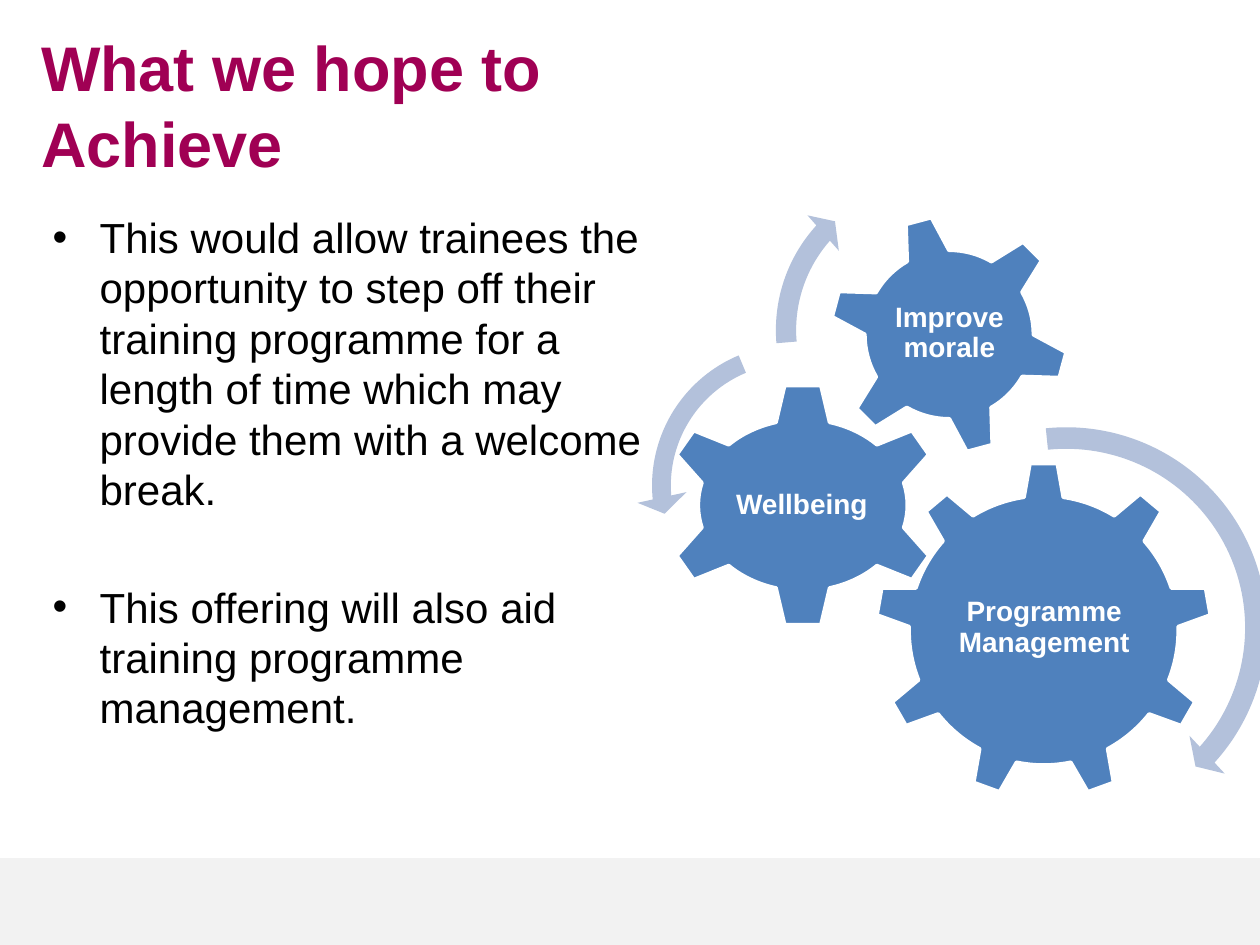
from pptx import Presentation
from pptx.dml.color import RGBColor
from pptx.enum.shapes import MSO_SHAPE
from pptx.enum.text import MSO_ANCHOR, PP_ALIGN
from pptx.oxml.ns import qn
from pptx.util import Cm, Pt
from lxml.etree import SubElement

COLORS = {
    "title": "A00054",
    "body": "000000",
    "gear": "4F81BD",
    "arrow": "B3C1DB",
    "footer": "F2F2F2",
    "white": "FFFFFF",
}
FONT = "Arial"

BENEFITS = [
    "This would allow trainees the opportunity to step off their training "
    "programme for a length of time which may provide them with a welcome break.",
    "This offering will also aid training programme management.",
]

# Label, shape, gear box, rotation, label box (cm)
GEARS = [
    ("Programme Management", MSO_SHAPE.GEAR_9,
     (17.65, 9.32, 6.78, 6.78), 0, (19.02, 10.92, 4.06, 3.48)),
    ("Wellbeing", MSO_SHAPE.GEAR_6,
     (13.34, 7.72, 5.69, 4.93), 0, (14.68, 8.97, 2.97, 2.44)),
    ("Improve morale", MSO_SHAPE.GEAR_6,
     (16.71, 4.32, 4.85, 4.85), 345, (17.78, 5.36, 2.72, 2.72)),
]

# Shape, left, top, side (cm), adjustments
ARROWS = [
    (MSO_SHAPE.CIRCULAR_ARROW, 17.15, 8.31, 8.69,
     (0.05, 2.99, 25.22, 158.49, 0.06)),
    (MSO_SHAPE.LEFT_CIRCULAR_ARROW, 12.83, 6.63, 6.32,
     (0.06, 4.3, 104.89, 148.38, 0.08)),
    (MSO_SHAPE.CIRCULAR_ARROW, 15.37, 3.25, 6.81,
     (0.06, 3.94, 133.14, 105.08, 0.07)),
]


def color(name):
    return RGBColor.from_string(COLORS[name])


def style_runs(paragraph, size, color_name, bold=False):
    for run in paragraph.runs:
        run.font.name = FONT
        run.font.size = Pt(size)
        run.font.bold = bold
        run.font.color.rgb = color(color_name)


def add_filled(slide, kind, box, fill):
    shape = slide.shapes.add_shape(kind, *map(Cm, box))
    shape.shadow.inherit = False
    shape.fill.solid()
    shape.fill.fore_color.rgb = color(fill)
    shape.line.fill.background()
    return shape


def add_text_frame(slide, box):
    frame = slide.shapes.add_textbox(*map(Cm, box)).text_frame
    frame.word_wrap = True
    return frame


def add_title(slide, text):
    heading = add_text_frame(slide, (0.58, 0.46, 21.59, 1.88)).paragraphs[0]
    heading.text = text
    style_runs(heading, 36, "title", bold=True)


def add_bullets(slide, items):
    frame = add_text_frame(slide, (0.81, 4.14, 12.73, 12.34))
    for index, item in enumerate(items):
        benefit = frame.add_paragraph() if index else frame.paragraphs[0]
        benefit.text = item
        if index:
            benefit.space_before = Pt(38.4)
        properties = benefit._p.get_or_add_pPr()
        properties.set("marL", str(Cm(0.95)))
        properties.set("indent", str(-Cm(0.95)))
        SubElement(properties, qn("a:buFont"), typeface=FONT)
        SubElement(properties, qn("a:buChar"), char="•")
        style_runs(benefit, 24, "body")


def add_gear(slide, label, kind, box, rotation, label_box):
    gear = add_filled(slide, kind, box, "gear")
    gear.rotation = rotation
    gear.line.color.rgb = color("white")
    gear.line.width = Pt(2)

    # The label stays upright when its gear is turned
    frame = add_text_frame(slide, label_box)
    frame.vertical_anchor = MSO_ANCHOR.MIDDLE
    frame.margin_left = frame.margin_right = Cm(0.05)
    frame.margin_top = frame.margin_bottom = Cm(0.05)
    caption = frame.paragraphs[0]
    caption.text = label
    caption.alignment = PP_ALIGN.CENTER
    caption.line_spacing = 0.9
    style_runs(caption, 16, "white", bold=True)


def add_turn_arrow(slide, kind, left, top, side, adjustments):
    arrow = add_filled(slide, kind, (left, top, side, side), "arrow")
    for index, value in enumerate(adjustments):
        arrow.adjustments[index] = value


def main():
    prs = Presentation()
    prs.slide_width, prs.slide_height = Cm(25.4), Cm(19.05)
    slide = prs.slides.add_slide(prs.slide_layouts[6])

    # Footer band
    add_filled(slide, MSO_SHAPE.RECTANGLE, (0, 17.3, 25.4, 1.75), "footer")

    # Title and benefits
    add_bullets(slide, BENEFITS)
    add_title(slide, "What we hope to \vAchieve")

    # Gears with their turning arrows
    for gear in GEARS:
        add_gear(slide, *gear)
    for arrow in ARROWS:
        add_turn_arrow(slide, *arrow)

    prs.save("out.pptx")


if __name__ == "__main__":
    main()
